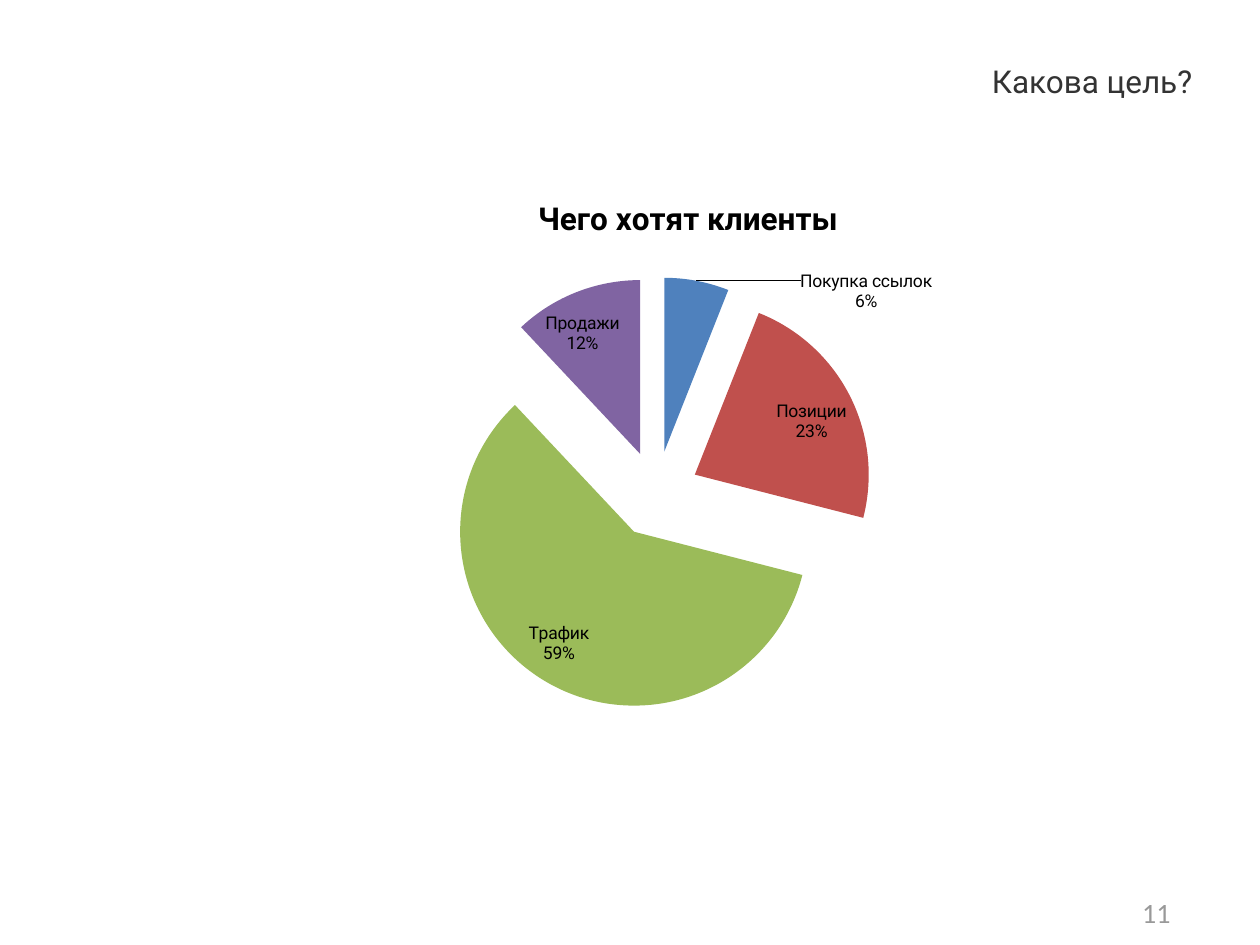
from lxml.etree import SubElement as Sub
from pptx import Presentation
from pptx.chart.data import CategoryChartData as Data
from pptx.dml.color import RGBColor as RGB
from pptx.enum.chart import XL_CHART_TYPE as Kind, XL_LABEL_POSITION as Pos
from pptx.enum.text import MSO_ANCHOR as Anchor, PP_ALIGN as Align
from pptx.oxml.ns import qn
from pptx.util import Cm, Pt

TITLE = "Какова цель?"
HEAD = "Чего хотят клиенты"
PAGE = "11"
BLACK, DARK, GREY = RGB(0, 0, 0), RGB(0x33, 0x33, 0x33), RGB(0x99, 0x99, 0x99)
SLICES = [
    ("Покупка ссылок", 6, RGB(0x4F, 0x81, 0xBD)),
    ("Позиции", 23, RGB(0xC0, 0x50, 0x4D)),
    ("Трафик", 59, RGB(0x9B, 0xBB, 0x59)),
    ("Продажи", 12, RGB(0x80, 0x64, 0xA2)),
]
PLOT = {"layoutTarget": "inner", "xMode": "edge", "yMode": "edge",
        "x": 0.22, "y": 0.19, "w": 0.49, "h": 0.81}
SHIFT = {"x": 0.26, "y": -0.03}
BURST = 25


def style(font, name, size, color, bold=False):
    font.name, font.size, font.bold = name, Pt(size), bold
    font.color.rgb = color


def write(shape, text, align, *look):
    frame = shape.text_frame
    frame.word_wrap = True
    frame.vertical_anchor = Anchor.MIDDLE
    para = frame.paragraphs[0]
    para.text, para.alignment = text, align
    style(para.font, *look)


def place(node, spot, rules):
    for old in node.findall(qn("c:layout")):
        node.remove(old)
    layout = Sub(node, qn("c:layout"))
    manual = Sub(layout, qn("c:manualLayout"))
    for key, val in rules.items():
        Sub(manual, qn("c:" + key), val=str(val))
    node.insert(spot, layout)


deck = Presentation()
deck.slide_width, deck.slide_height = Cm(25.4), Cm(19.05)
slide = deck.slides.add_slide(deck.slide_layouts[5])

title = slide.shapes.title
title.left, title.top, title.width, title.height = Cm(7.29), Cm(0.53), Cm(17), Cm(2.21)
write(title, TITLE, Align.RIGHT, "Roboto", 18, DARK)

page = slide.shapes.add_textbox(Cm(22.66), Cm(17.75), Cm(1.3), Cm(1.3))
write(page, PAGE, Align.CENTER, "Calibri", 16, GREY)

data = Data()
data.categories = [name for name, _, _ in SLICES]
data.add_series("Series 1", [share for _, share, _ in SLICES])
chart = slide.shapes.add_chart(
    Kind.PIE, Cm(4.7), Cm(3.53), Cm(18.34), Cm(10.82), data).chart
style(chart.font, "Roboto", 10, BLACK)
chart.has_legend = False
chart.has_title = True
head = chart.chart_title.text_frame.paragraphs[0]
head.text = HEAD
style(head.font, "Roboto", 18, BLACK, True)
place(chart._chartSpace.find(".//" + qn("c:plotArea")), 0, PLOT)

pie = chart.plots[0]
pie.vary_by_categories = True
series = pie.series[0]
for i, (_, _, color) in enumerate(SLICES):
    fill = series.points[i].format.fill
    fill.solid()
    fill.fore_color.rgb = color

ser = series._element
burst = Sub(ser, qn("c:explosion"), val=str(BURST))
ser.find(qn("c:dPt")).addprevious(burst)

tags = series.data_labels
tags.show_value = False
tags.show_category_name = tags.show_percentage = True
tags.position = Pos.BEST_FIT
style(tags.font, "Roboto", 10, BLACK)

first = series.points[0].data_label
first.position = Pos.INSIDE_END
style(first.font, "Roboto", 10, BLACK)
tag = ser.find(".//" + qn("c:dLbl"))
for key, val in (("Val", 0), ("CatName", 1), ("Percent", 1)):
    tag.find(qn("c:show" + key)).set("val", str(val))
place(tag, 1, SHIFT)

deck.save("out.pptx")
